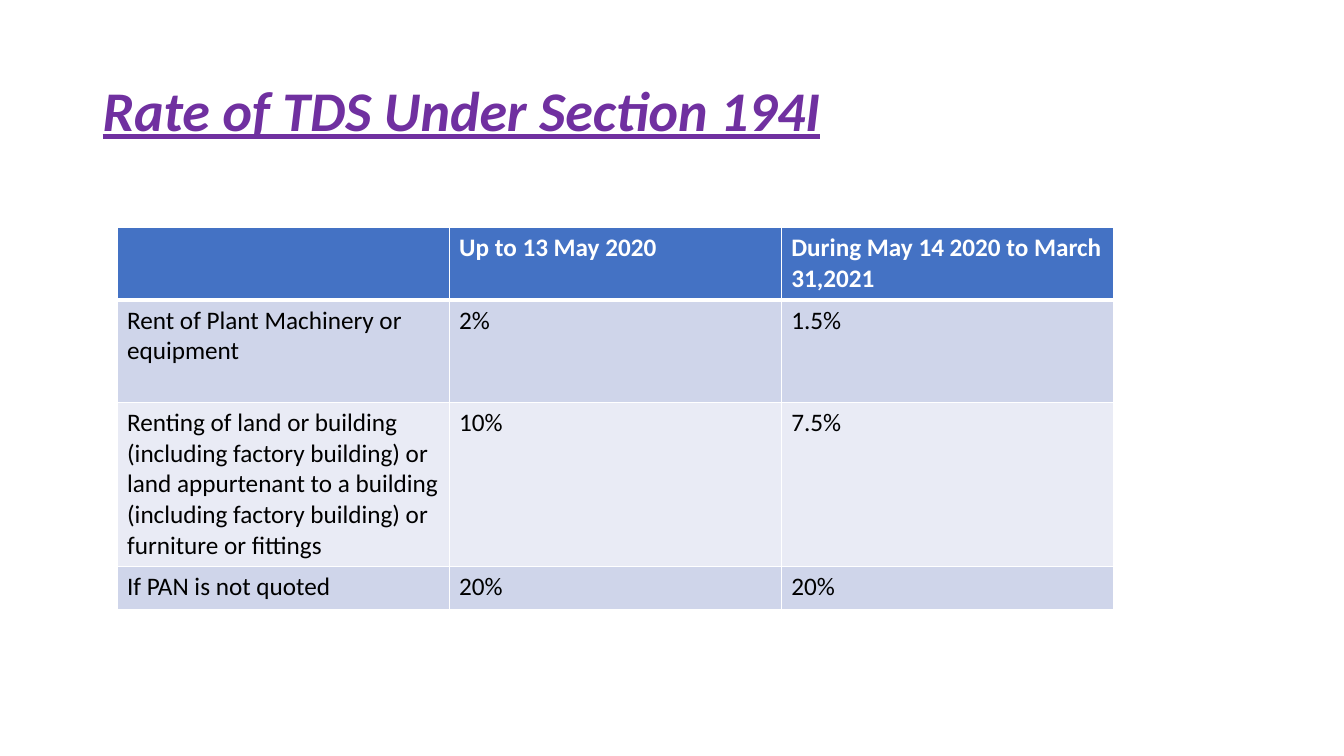
from dataclasses import dataclass

from lxml import etree
from pptx import Presentation
from pptx import util as u
from pptx.dml.color import RGBColor
from pptx.enum import text
from pptx.oxml import ns

FONT = "Calibri"
WHITE = "FFFFFF"


@dataclass
class Row:
    cells: tuple[str, str, str]
    high: float
    fill: str
    ink: str = "000000"
    bold: bool = False
    top: int = 1
    base: int = 1


ROWS = [
    Row(("", "Up to 13 May 2020", "During May 14 2020 to March 31,2021"),
        1.82, "4472C4", WHITE, True, base=3),
    Row(("Rent of Plant Machinery or equipment", "2%", "1.5%"),
        2.58, "CFD5EA", top=3),
    Row(("Renting of land or building (including factory building) or land "
         "appurtenant to a building (including factory building) or "
         "furniture or fittings", "10%", "7.5%"),
        4.14, "E9EBF5"),
    Row(("If PAN is not quoted", "20%", "20%"), 1.07, "CFD5EA"),
]


def tint(code: str) -> RGBColor:
    return RGBColor.from_string(code)


def write(para, words: str, size: int, ink: str, bold: bool):
    run = para.add_run()
    run.text = words
    font = run.font
    font.name = FONT
    font.size = u.Pt(size)
    font.bold = bold
    font.color.rgb = tint(ink)
    return run


def edge(cell, side: str, wide: int) -> None:
    props = cell._tc.get_or_add_tcPr()
    line = etree.SubElement(props, ns.qn(f"a:ln{side}"), w=str(u.Pt(wide)))
    fill = etree.SubElement(line, ns.qn("a:solidFill"))
    etree.SubElement(fill, ns.qn("a:srgbClr"), val=WHITE)


def draw_title(slide) -> None:
    title = slide.shapes.title
    title.left, title.top = u.Cm(2.33), u.Cm(1.01)
    title.width, title.height = u.Cm(29.21), u.Cm(3.68)
    frame = title.text_frame
    frame.word_wrap = True
    frame.auto_size = text.MSO_AUTO_SIZE.NONE
    frame.vertical_anchor = text.MSO_ANCHOR.MIDDLE
    para = frame.paragraphs[0]
    para.alignment = text.PP_ALIGN.LEFT
    para.line_spacing = 0.9
    run = write(para, "Rate of TDS Under Section 194I", 40, "7030A0", True)
    run.font.italic = True
    run.font.underline = True


def draw_table(slide, rows: list[Row]) -> None:
    high = sum(row.high for row in rows)
    table = slide.shapes.add_table(
        len(rows), 3, u.Cm(2.95), u.Cm(5.74), u.Cm(25.11), u.Cm(high)).table
    for col in table.columns:
        col.width = u.Cm(8.37)
    for line, row in zip(table.rows, rows):
        line.height = u.Cm(row.high)
        for cell, words in zip(line.cells, row.cells):
            for side, wide in zip("LRTB", (1, 1, row.top, row.base)):
                edge(cell, side, wide)
            cell.fill.solid()
            cell.fill.fore_color.rgb = tint(row.fill)
            if words:
                write(cell.text_frame.paragraphs[0], words, 18,
                      row.ink, row.bold)


def main() -> None:
    deck = Presentation()
    deck.slide_width, deck.slide_height = u.Cm(33.87), u.Cm(19.05)
    slide = deck.slides.add_slide(deck.slide_layouts[5])
    draw_title(slide)
    draw_table(slide, ROWS)
    deck.save("out.pptx")


if __name__ == "__main__":
    main()
